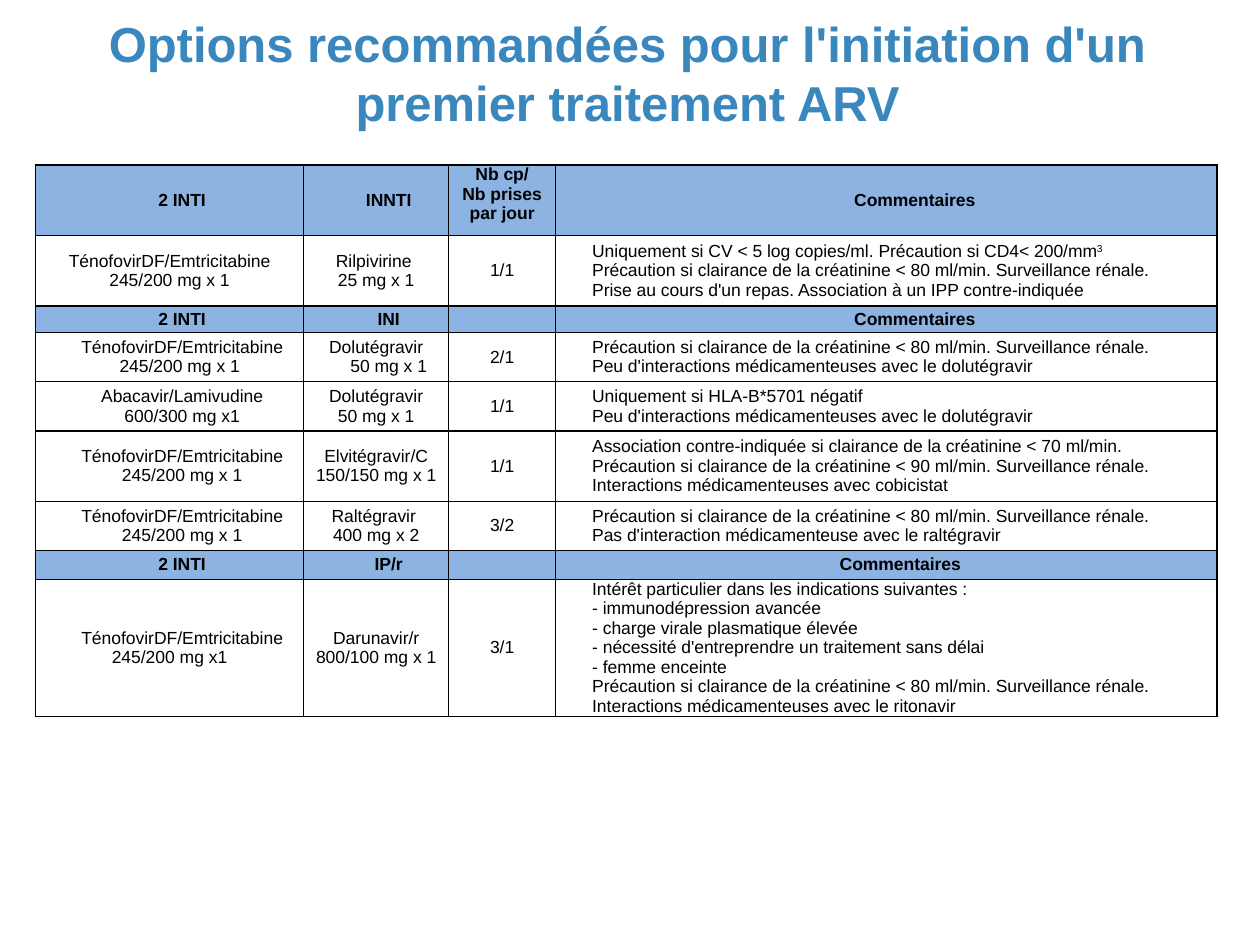
from lxml import etree
from pptx import Presentation
from pptx.dml.color import RGBColor
from pptx.enum import text as tx
from pptx.oxml.ns import qn
from pptx.util import Inches, Pt

BLUE = RGBColor(0x3A, 0x87, 0xBD)
HEAD = RGBColor(0x8D, 0xB3, 0xE2)
BLACK = RGBColor(0, 0, 0)
FONT = "Arial"

# Content: "\n" starts a paragraph, "\v" breaks a line, "^" raises what follows
TITLE = "Options recommandées pour l'initiation d'un premier traitement ARV"
TENO = "TénofovirDF/Emtricitabine"
CLEAR = "Précaution si clairance de la créatinine < {} ml/min. Surveillance rénale."
C80, C90 = CLEAR.format(80), CLEAR.format(90)
DOLU = "Peu d'interactions médicamenteuses avec le dolutégravir"
ROWS = [
    ("2 INTI", "INNTI", "Nb cp/\vNb prises par jour", "Commentaires"),
    (TENO + " 245/200 mg x 1", "Rilpivirine \n25 mg x 1", "1/1",
     "Uniquement si CV < 5 log copies/ml. Précaution si CD4< 200/mm^3\n"
     + C80 + "\nPrise au cours d'un repas. Association à un IPP contre-indiquée"),
    ("2 INTI", "INI", "", "Commentaires"),
    (TENO + "\n245/200 mg x 1 ", "Dolutégravir\n50 mg x 1", "2/1",
     C80 + "\n" + DOLU),
    ("Abacavir/Lamivudine\n600/300 mg x1", "Dolutégravir\v50 mg x 1", "1/1",
     "Uniquement si HLA-B*5701 négatif\n" + DOLU),
    (TENO + "\n245/200 mg x 1", "Elvitégravir/C\v150/150 mg x 1", "1/1",
     "Association contre-indiquée si clairance de la créatinine < 70 ml/min.\n"
     + C90 + "\nInteractions médicamenteuses avec cobicistat"),
    (TENO + "\n245/200 mg x 1", "Raltégravir \v400 mg x 2", "3/2",
     C80 + "\nPas d'interaction médicamenteuse avec le raltégravir"),
    ("2 INTI", "IP/r", "", "Commentaires"),
    (TENO + " 245/200 mg x1", "Darunavir/r 800/100 mg x 1", "3/1",
     "Intérêt particulier dans les indications suivantes :\n"
     "- immunodépression avancée\n- charge virale plasmatique élevée\n"
     "- nécessité d'entreprendre un traitement sans délai\n- femme enceinte\n"
     + C80 + "\nInteractions médicamenteuses avec le ritonavir"),
]
HEADS = (0, 2, 7)
WIDTHS = (2.13, 1.15, 0.85, 5.25)
HEIGHTS = (0.56, 0.56, 0.21, 0.39, 0.39, 0.56, 0.39, 0.23, 0.94)

# Left margin and first-line indent by column, then exceptions by (row, col, paragraph)
HEAD_IND = ((0, 0.2), (0, 0.2), (0, 0), (0.25, 0.2))
BODY_IND = ((0, 0.2), (0, 0), (0.02, -0.02), (0.02, 0.2))
ODD_IND = {(1, 0, 0): (0, 0), (3, 1, 1): (0, 0.2), (7, 3, 0): (0.02, 0.2)}


def style(run, size, color, bold):
    font = run.font
    font.name, font.size, font.bold = FONT, Pt(size), bold
    font.color.rgb = color


def border(cell):
    props = cell._tc.get_or_add_tcPr()
    for side in ("a:lnL", "a:lnR", "a:lnT", "a:lnB"):
        line = etree.SubElement(props, qn(side), w=str(Pt(1)))
        fill = etree.SubElement(line, qn("a:solidFill"))
        etree.SubElement(fill, qn("a:srgbClr"), val=str(BLACK))


def fill_cell(cell, row, col, words):
    head = row in HEADS
    border(cell)
    cell.margin_left = cell.margin_right = Inches(0.07)
    cell.margin_top = cell.margin_bottom = 0
    top = (row, col) == (0, 2)
    cell.vertical_anchor = tx.MSO_ANCHOR.TOP if top else tx.MSO_ANCHOR.MIDDLE
    if head:
        cell.fill.solid()
        cell.fill.fore_color.rgb = HEAD
    else:
        cell.fill.background()
    frame = cell.text_frame
    frame.text = words
    for i, para in enumerate(frame.paragraphs):
        left = col == 3 and not head
        para.alignment = tx.PP_ALIGN.LEFT if left else tx.PP_ALIGN.CENTER
        base = (HEAD_IND if head else BODY_IND)[col]
        margin, indent = ODD_IND.get((row, col, i), base)
        props = para._p.get_or_add_pPr()
        props.set("marL", str(Inches(margin)))
        props.set("indent", str(Inches(indent)))
        if "^" in para.text:
            para.text, power = para.text.split("^")
            run = para.add_run()
            run.text = power
            run.font._element.set("baseline", "30000")
        for run in para.runs:
            style(run, 10, BLACK, head)
        if not words:  # keeps an empty header cell low
            etree.SubElement(para._p, qn("a:endParaRPr"), sz="1000")


def main():
    deck = Presentation()
    deck.slide_width, deck.slide_height = Inches(10), Inches(7.5)
    slide = deck.slides.add_slide(deck.slide_layouts[5])

    # Title
    title = slide.shapes.title
    title.left, title.top = Inches(0.04), Inches(0.08)
    title.width, title.height = Inches(9.88), Inches(0.99)
    frame = title.text_frame
    frame.text = TITLE
    frame.word_wrap = True
    frame.auto_size = tx.MSO_AUTO_SIZE.NONE
    frame.vertical_anchor = tx.MSO_ANCHOR.MIDDLE
    frame.paragraphs[0].alignment = tx.PP_ALIGN.CENTER
    style(frame.paragraphs[0].runs[0], 28, BLUE, True)

    # Treatment table
    table = slide.shapes.add_table(
        len(ROWS), len(WIDTHS), Inches(0.28), Inches(1.31),
        Inches(sum(WIDTHS)), Inches(sum(HEIGHTS))).table
    table.first_row = table.horz_banding = False
    for col, width in zip(table.columns, WIDTHS):
        col.width = Inches(width)
    for row, height in zip(table.rows, HEIGHTS):
        row.height = Inches(height)
    for r, row in enumerate(ROWS):
        for c, words in enumerate(row):
            fill_cell(table.cell(r, c), r, c, words)

    deck.save("out.pptx")


if __name__ == "__main__":
    main()
